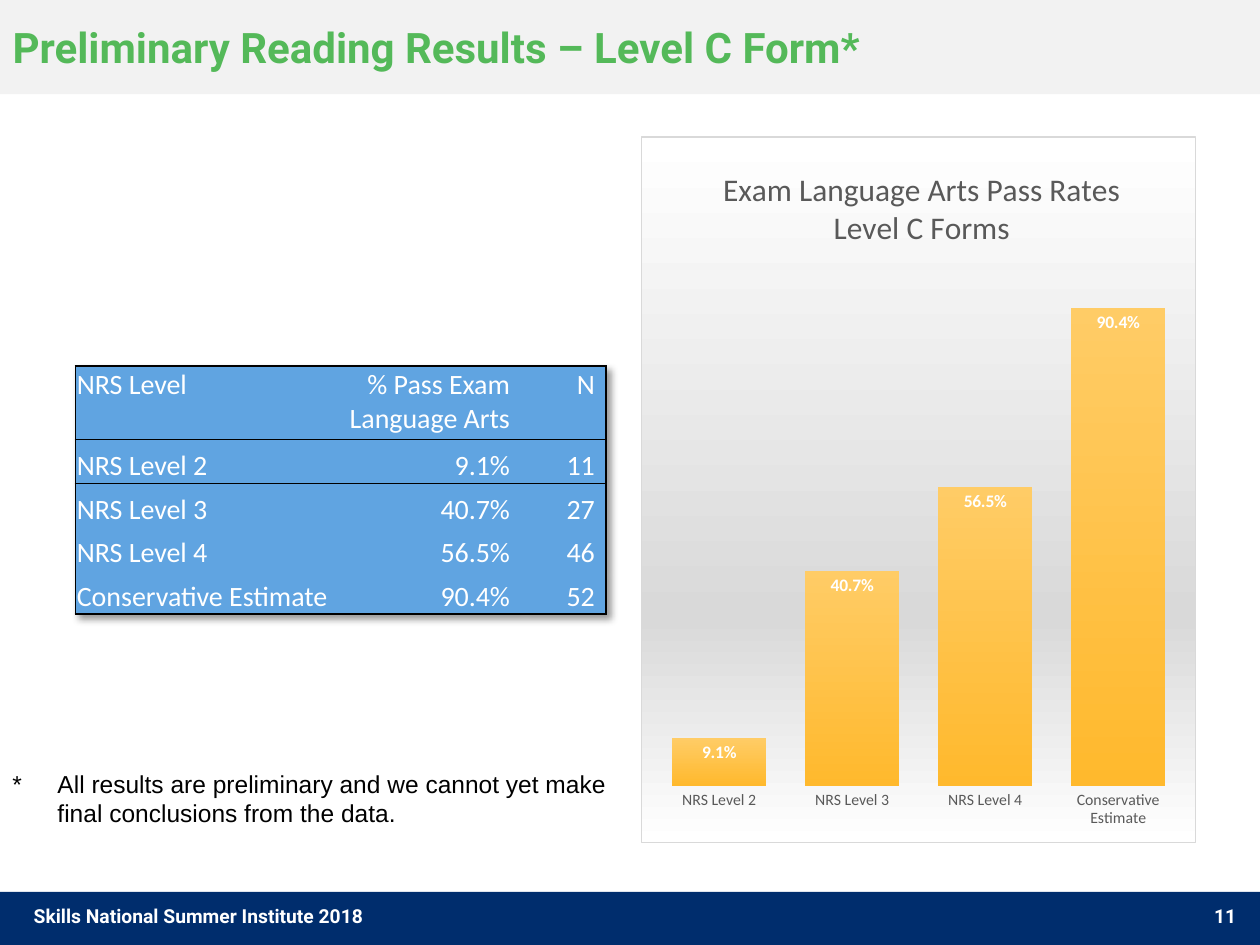
import pptx
import pptx.chart.data
import pptx.dml.color
import pptx.enum.chart
import pptx.enum.shapes
import pptx.enum.text
import pptx.oxml
import pptx.oxml.ns
import pptx.util
from pptx.util import Cm, Pt

WHITE = pptx.dml.color.RGBColor(0xFF, 0xFF, 0xFF)
BLACK = pptx.dml.color.RGBColor(0x00, 0x00, 0x00)
PALE_GREY = pptx.dml.color.RGBColor(0xF2, 0xF2, 0xF2)
MID_GREY = pptx.dml.color.RGBColor(0xD9, 0xD9, 0xD9)
DARK_GREY = pptx.dml.color.RGBColor(0x59, 0x59, 0x59)
NAVY = pptx.dml.color.RGBColor(0x00, 0x2D, 0x6D)
GREEN = pptx.dml.color.RGBColor(0x54, 0xB9, 0x59)
TABLE_BLUE = pptx.dml.color.RGBColor(0x60, 0xA4, 0xE1)
LIGHT_AMBER = pptx.dml.color.RGBColor(0xFF, 0xCC, 0x66)
AMBER = pptx.dml.color.RGBColor(0xFF, 0xB9, 0x2D)

RIGHT = pptx.enum.text.PP_ALIGN.RIGHT
LEFT = pptx.enum.text.PP_ALIGN.LEFT
NAMESPACES = pptx.oxml.ns.nsdecls("a", "c")
qn = pptx.oxml.ns.qn


def style_font(font, name, size, color, bold=False):
    font.name = name
    font.size = Pt(size)
    font.color.rgb = color
    font.bold = bold


def gradient_xml(stops):
    stop_xml = "".join(
        f'<a:gs pos="{percent * 1000}"><a:srgbClr val="{color}"/></a:gs>'
        for percent, color in stops)
    return (f'<a:gradFill {NAMESPACES}><a:gsLst>{stop_xml}</a:gsLst>'
            f'<a:lin ang="5400000" scaled="0"/></a:gradFill>')


presentation = pptx.Presentation()
presentation.slide_width = Cm(25.4)
presentation.slide_height = Cm(19.05)
slide = presentation.slides.add_slide(presentation.slide_layouts[5])
title = slide.shapes.title

# Header and footer bands, kept behind the title
for top, height, color in [(0, 1.9, PALE_GREY), (17.98, 1.07, NAVY)]:
    band = slide.shapes.add_shape(pptx.enum.shapes.MSO_SHAPE.RECTANGLE,
                                  0, Cm(top), Cm(25.4), Cm(height))
    band.shadow.inherit = False
    band.fill.solid()
    band.fill.fore_color.rgb = color
    band.line.fill.background()
    title._element.addprevious(band._element)

# Title
title.left, title.top, title.width, title.height = 0, 0, Cm(18.24), Cm(1.9)
title.text_frame.text = "Preliminary Reading Results – Level C Form*"
title.text_frame.vertical_anchor = pptx.enum.text.MSO_ANCHOR.MIDDLE
title.text_frame.paragraphs[0].alignment = LEFT
style_font(title.text_frame.paragraphs[0].runs[0].font, "Roboto", 24, GREEN, True)

# Footer text, slide number and footnote
for text, left, top, width, height, alignment, font in [
    ("Skills National Summer Institute 2018", 0.43, 18.11, 8.69, 0.84, LEFT,
     ("Roboto", 11, WHITE, True)),
    ("11", 19.25, 18.11, 5.92, 0.69, RIGHT, ("Roboto", 11, WHITE, True)),
    ("*\tAll results are preliminary and we cannot yet make "
     "final conclusions from the data.", 0, 15.37, 12.7, 1.45, LEFT,
     ("Arial", 14, BLACK)),
]:
    box = slide.shapes.add_textbox(Cm(left), Cm(top), Cm(width), Cm(height))
    box.text_frame.word_wrap = True
    paragraph = box.text_frame.paragraphs[0]
    paragraph.text = text
    paragraph.alignment = alignment
    if "\t" in text:
        properties = paragraph._p.get_or_add_pPr()
        properties.set("marL", str(Cm(0.91)))
        properties.set("indent", str(-Cm(0.91)))
        properties.append(pptx.oxml.parse_xml(
            f'<a:tabLst {NAMESPACES}><a:tab pos="{Cm(0.57)}" algn="l"/></a:tabLst>'))
    style_font(paragraph.runs[0].font, *font)

# Pass rate chart
LEVELS = ["NRS Level 2", "NRS Level 3", "NRS Level 4", "Conservative Estimate"]
PASS_RATES = [0.091, 0.407, 0.565, 0.904]
COUNTS = [11, 27, 46, 52]
chart_data = pptx.chart.data.CategoryChartData(number_format="0.0%")
chart_data.categories = LEVELS
chart_data.add_series("Series 1", PASS_RATES)
chart = slide.shapes.add_chart(
    pptx.enum.chart.XL_CHART_TYPE.COLUMN_CLUSTERED,
    Cm(12.92), Cm(2.75), Cm(11.2), Cm(14.25), chart_data).chart
style_font(chart.font, "Calibri", 10, BLACK)
chart.has_legend = False
chart.has_title = True
chart.chart_title.text_frame.text = "Exam Language Arts Pass Rates\nLevel C Forms"
for paragraph in chart.chart_title.text_frame.paragraphs:
    style_font(paragraph.runs[0].font, "Calibri", 18, DARK_GREY)

value_axis = chart.value_axis
value_axis.minimum_scale, value_axis.maximum_scale = 0, 1
value_axis.has_major_gridlines = False
value_axis.visible = False
category_axis = chart.category_axis
category_axis.major_tick_mark = pptx.enum.chart.XL_TICK_MARK.NONE
category_axis.format.line.fill.background()
style_font(category_axis.tick_labels.font, "Calibri", 9, DARK_GREY)

plot = chart.plots[0]
plot.gap_width = 41
plot.vary_by_categories = False
plot.has_data_labels = True
labels = plot.data_labels
labels.show_value = True
labels.number_format = "0.0%"
labels.number_format_is_linked = False
labels.position = pptx.enum.chart.XL_LABEL_POSITION.INSIDE_END
style_font(labels.font, "Calibri", 10, WHITE, True)

# Gradients of the bars and the chart background
series_properties = plot.series[0]._element.get_or_add_spPr()
series_properties.insert(0, pptx.oxml.parse_xml(
    gradient_xml([(0, LIGHT_AMBER), (100, AMBER)])))
chart_element = chart._chartSpace.find(qn("c:chart"))
background = gradient_xml([(0, WHITE), (68, MID_GREY), (100, WHITE)])
chart_element.addnext(pptx.oxml.parse_xml(
    f'<c:spPr {NAMESPACES}>{background}<a:ln w="{Pt(0.75)}"><a:solidFill>'
    f'<a:srgbClr val="{MID_GREY}"/></a:solidFill></a:ln></c:spPr>'))

# Fixed places for the chart title and the plot
title_element = chart_element.find(qn("c:title"))
plot_area = chart_element.find(qn("c:plotArea"))
for parent, index, target, place in [
    (title_element, 1, "", {"x": 0.14, "y": 0.04}),
    (plot_area, 0, '<c:layoutTarget val="inner"/>',
     {"x": 0.02, "y": 0.17, "w": 0.96, "h": 0.75}),
]:
    for layout in parent.findall(qn("c:layout")):
        parent.remove(layout)
    modes = "".join(f'<c:{key}Mode val="edge"/>' for key in "xy")
    values = "".join(f'<c:{key} val="{value}"/>' for key, value in place.items())
    parent.insert(index, pptx.oxml.parse_xml(
        f'<c:layout {NAMESPACES}><c:manualLayout>{target}{modes}{values}'
        f'</c:manualLayout></c:layout>'))

# Results table
rows = [("NRS Level", "% Pass Exam Language Arts", "N")]
rows += [(level, f"{rate:.1%}", str(count))
         for level, rate, count in zip(LEVELS, PASS_RATES, COUNTS)]
table = slide.shapes.add_table(len(rows), 3, Cm(1.52), Cm(7.38),
                               Cm(10.7), Cm(5)).table
table.first_row = table.horz_banding = False
for column, width in zip(table.columns, [5.28, 3.71, 1.71]):
    column.width = Cm(width)
table_properties = table._tbl.tblPr
table_properties.find(qn("a:tableStyleId")).text = "{2D5ABB26-0587-4C30-8999-92F81FD0307C}"
table_properties.insert(0, pptx.oxml.parse_xml(
    f'<a:effectLst {NAMESPACES}><a:outerShdw blurRad="{Pt(4)}" dist="{Pt(3)}" '
    f'dir="2700000" algn="tl" rotWithShape="0"><a:srgbClr val="{BLACK}">'
    f'<a:alpha val="40000"/></a:srgbClr></a:outerShdw></a:effectLst>'))

last_row = len(rows) - 1
for row_index, row in enumerate(rows):
    table.rows[row_index].height = Cm(0.88 if row_index else 1.48)
    for column_index, text in enumerate(row):
        cell = table.cell(row_index, column_index)
        cell.text = text
        cell.margin_left = cell.margin_top = Cm(0.03)
        cell.margin_right = Cm(0.23 if column_index else 0.03)
        cell.margin_bottom = 0
        cell.vertical_anchor = (pptx.enum.text.MSO_ANCHOR.BOTTOM if row_index
                                else pptx.enum.text.MSO_ANCHOR.TOP)
        paragraph = cell.text_frame.paragraphs[0]
        paragraph.alignment = RIGHT if column_index else LEFT
        style_font(paragraph.runs[0].font, "Calibri", 16, WHITE)
        # Outer frame and the rule under the header
        for side, width in [
            ("L", 1 if column_index == 0 else 0),
            ("R", 1 if column_index == 2 else 0),
            ("T", {0: 1, 1: 0.5}.get(row_index, 0)),
            ("B", {0: 0.5, last_row: 1}.get(row_index, 0)),
        ]:
            if width:
                cell._tc.get_or_add_tcPr().append(pptx.oxml.parse_xml(
                    f'<a:ln{side} {NAMESPACES} w="{Pt(width)}"><a:solidFill>'
                    f'<a:srgbClr val="{BLACK}"/></a:solidFill></a:ln{side}>'))
        cell.fill.solid()
        cell.fill.fore_color.rgb = TABLE_BLUE

presentation.save("out.pptx")
